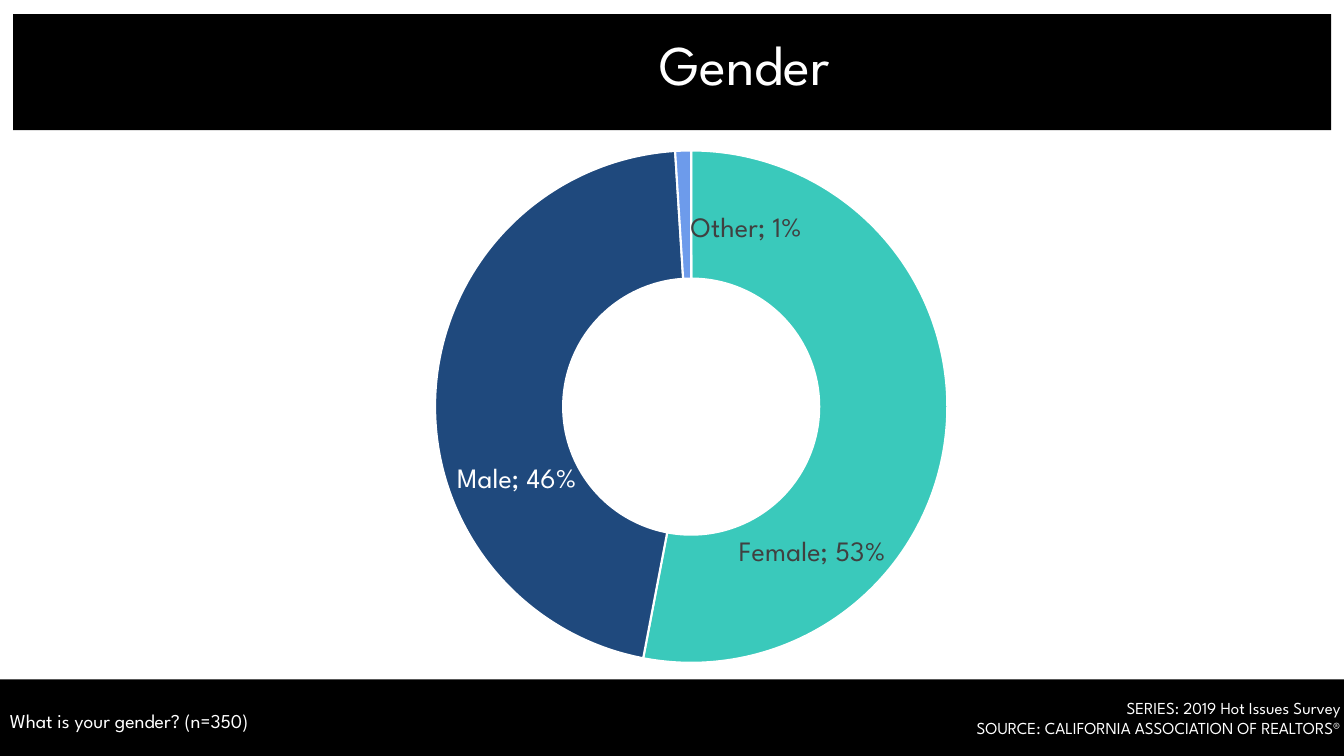
from dataclasses import dataclass

from lxml.etree import SubElement
from pptx import Presentation
from pptx.chart.data import CategoryChartData
from pptx.dml.color import RGBColor
from pptx.enum.chart import XL_CHART_TYPE as ChartType
from pptx.enum.shapes import MSO_SHAPE as Preset
from pptx.enum.text import MSO_ANCHOR as Anchor, PP_ALIGN as Align
from pptx.oxml import parse_xml
from pptx.oxml.ns import nsdecls, qn
from pptx.util import Cm, Pt


@dataclass(frozen=True)
class Theme:
    font: str = "League Spartan"
    black: str = "000000"
    white: str = "FFFFFF"
    gray: str = "404040"
    teal: str = "3AC9BB"
    navy: str = "1F497D"
    blue: str = "6D9BEB"
    title: int = 40
    label: int = 20
    question: int = 14
    credit: int = 12
    chart: int = 10


THEME = Theme()

SLICES = [
    ("Female", 0.53, THEME.teal, THEME.gray, (-0.08, 0.24)),
    ("Male", 0.46, THEME.navy, THEME.white, (0.02, 0.16)),
    ("Other", 0.01, THEME.blue, THEME.gray, (0.07, 0.03)),
]


def style_font(font, size, color):
    font.name = THEME.font
    font.size = Pt(size)
    font.color.rgb = RGBColor.from_string(color)


def place(shape, left, top, width, height):
    shape.left, shape.top = Cm(left), Cm(top)
    shape.width, shape.height = Cm(width), Cm(height)


def write_text(frame, text, size, align=Align.LEFT, anchor=Anchor.TOP, wrap=True, spacing=None):
    frame.word_wrap = wrap
    frame.vertical_anchor = anchor
    for index, line in enumerate(text.split("\n")):
        para = frame.add_paragraph() if index else frame.paragraphs[0]
        para.alignment = align
        para.line_spacing = spacing
        span = para.add_run()
        span.text = line
        style_font(span.font, size, THEME.white)


def add_bar(page, left, top, width, height):
    bar = page.shapes.add_shape(Preset.RECTANGLE, Cm(left), Cm(top), Cm(width), Cm(height))
    bar.shadow.inherit = False
    bar.fill.solid()
    bar.fill.fore_color.rgb = RGBColor.from_string(THEME.black)
    bar.line.fill.background()
    page.shapes.title.element.addprevious(bar.element)


def add_text(page, left, top, width, height, text, size, **text_format):
    box = page.shapes.add_textbox(Cm(left), Cm(top), Cm(width), Cm(height))
    write_text(box.text_frame, text, size, **text_format)


def manual_layout(**values):
    layout = parse_xml(f"<c:layout {nsdecls('c')}><c:manualLayout/></c:layout>")
    for name, value in values.items():
        SubElement(layout[0], qn(f"c:{name}")).set("val", str(value))
    return layout


def finish_label(label, offset):
    x, y = offset
    layout = manual_layout(x=x, y=y)
    label.find(qn("c:idx")).addnext(layout)
    layout.addnext(parse_xml(f'<c:numFmt {nsdecls("c")} formatCode="0%" sourceLinked="0"/>'))
    label.find(qn("c:showCatName")).set("val", "1")
    SubElement(label, qn("c:separator")).text = "; "


def add_doughnut(page, left, top, width, height):
    data = CategoryChartData(number_format="0%")
    data.categories = [name for name, *_ in SLICES]
    data.add_series("Series 1", [value for _, value, *_ in SLICES])
    frame = page.shapes.add_chart(
        ChartType.DOUGHNUT, Cm(left), Cm(top), Cm(width), Cm(height), data)
    chart = frame.chart
    chart.has_title = False
    chart.has_legend = False
    style_font(chart.font, THEME.chart, THEME.black)
    plot = chart.plots[0]
    plot.vary_by_categories = True
    series = plot.series[0]
    labels = series.data_labels
    labels.show_value = labels.show_category_name = True
    labels.show_percentage = False
    labels.number_format = "0%"
    labels.number_format_is_linked = False
    style_font(labels.font, THEME.label, THEME.gray)
    for index, (_, _, fill, ink, _) in enumerate(SLICES):
        point = series.points[index]
        point.format.fill.solid()
        point.format.fill.fore_color.rgb = RGBColor.from_string(fill)
        point.format.line.color.rgb = RGBColor.from_string(THEME.white)
        point.format.line.width = Pt(1.5)
        style_font(point.data_label.font, THEME.label, ink)
    root = chart.element
    for label, (*_, offset) in zip(root.iter(qn("c:dLbl")), SLICES):
        finish_label(label, offset)
    next(root.iter(qn("c:holeSize"))).set("val", "58")
    area = next(root.iter(qn("c:plotArea")))
    for layout in area.findall(qn("c:layout")):
        area.remove(layout)
    area.insert(0, manual_layout(
        layoutTarget="inner", xMode="edge", yMode="edge", x=0.2, y=0.03, w=0.585, h=0.945))


def main():
    deck = Presentation()
    deck.slide_width, deck.slide_height = Cm(33.87), Cm(19.05)
    page = deck.slides.add_slide(deck.slide_layouts[5])

    add_bar(page, 0, 17.12, 33.87, 1.93)
    add_bar(page, 0.33, 0.36, 33.22, 2.92)
    title = page.shapes.title
    place(title, 4.32, 0.86, 28.88, 1.7)
    write_text(title.text_frame, "Gender", THEME.title,
               align=Align.CENTER, anchor=Anchor.MIDDLE, spacing=0.9)

    add_doughnut(page, 6.55, 3.38, 22.07, 13.67)
    add_text(page, 22.76, 17.45, 11.28, 1.27,
             "SERIES: 2019 Hot Issues Survey\nSOURCE: CALIFORNIA ASSOCIATION OF REALTORS®",
             THEME.credit, align=Align.RIGHT, wrap=False)
    add_text(page, 0, 17.73, 12.14, 0.86, "What is your gender? (n=350)", THEME.question)
    deck.save("out.pptx")


if __name__ == "__main__":
    main()
